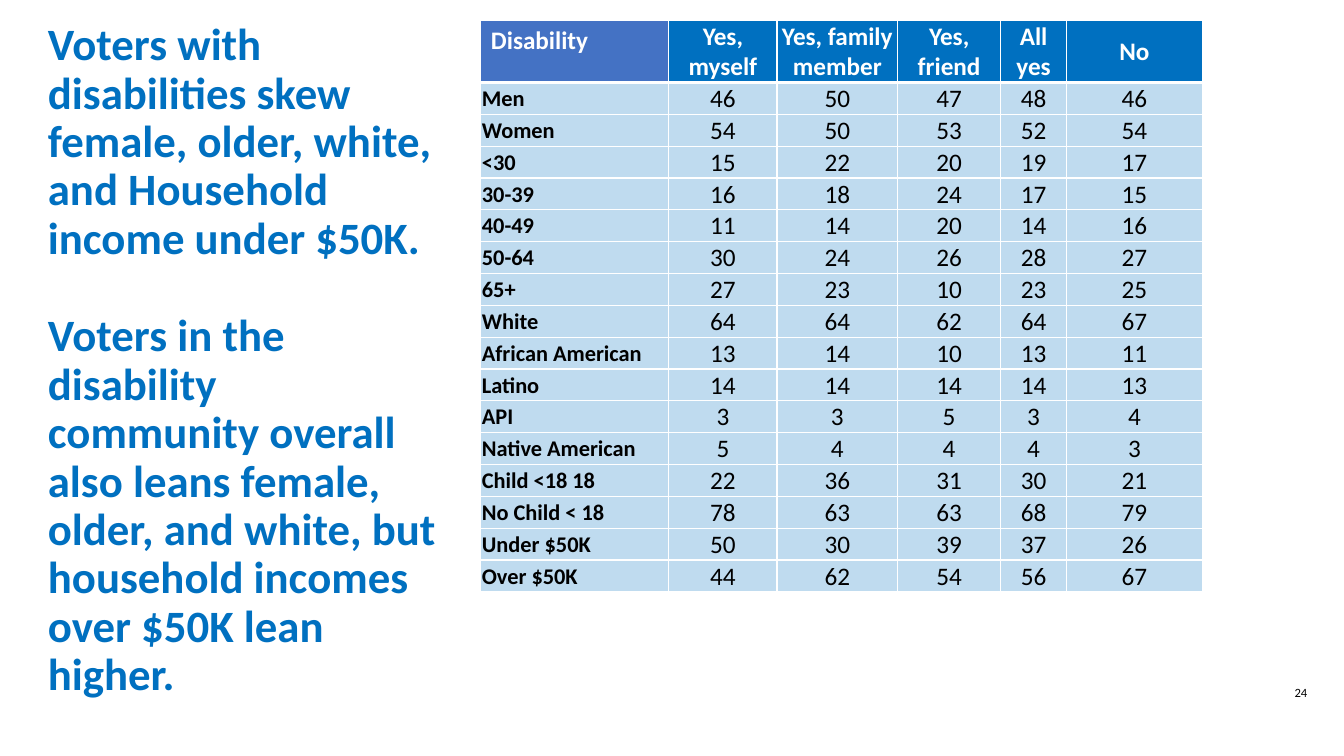
import lxml.etree
import pptx
import pptx.dml.color
import pptx.enum.text
import pptx.oxml.ns
import pptx.util

EMU_PER_PX = 9525  # 96 px to the inch
FONT_NAME = "Calibri"
COLORS = {
    "blue": "0070C0",
    "corner": "4472C4",
    "body": "BFDBEF",
    "white": "FFFFFF",
    "black": "000000",
}
ALIGN = pptx.enum.text.PP_ALIGN
ANCHOR = pptx.enum.text.MSO_ANCHOR

TITLE = [
    "Voters with disabilities skew female, older, white, and Household income under $50K.",
    "Voters in the disability community overall also leans female, older, and white, "
    "but household incomes over $50K lean higher.",
]
HEADERS = ["Disability", "Yes, myself", "Yes, family member", "Yes, friend", "All yes", "No"]
COLUMN_WIDTHS = [179, 103, 115, 98, 63, 129]
HEADER_HEIGHT, ROW_HEIGHT = 58, 30
ROWS = [
    ("Men", 46, 50, 47, 48, 46),
    ("Women", 54, 50, 53, 52, 54),
    ("<30", 15, 22, 20, 19, 17),
    ("30-39", 16, 18, 24, 17, 15),
    ("40-49", 11, 14, 20, 14, 16),
    ("50-64", 30, 24, 26, 28, 27),
    ("65+", 27, 23, 10, 23, 25),
    ("White", 64, 64, 62, 64, 67),
    ("African American", 13, 14, 10, 13, 11),
    ("Latino", 14, 14, 14, 14, 13),
    ("API", 3, 3, 5, 3, 4),
    ("Native American", 5, 4, 4, 4, 3),
    ("Child <18 18", 22, 36, 31, 30, 21),
    ("No Child < 18", 78, 63, 63, 68, 79),
    ("Under $50K", 50, 30, 39, 37, 26),
    ("Over $50K", 44, 62, 54, 56, 67),
]


def px(length):
    return pptx.util.Emu(length * EMU_PER_PX)


def rgb(name):
    return pptx.dml.color.RGBColor.from_string(COLORS[name])


def apply_format(target, values):
    for name, value in values.items():
        setattr(target, name, value)


def write_paragraph(paragraph, text, size, color, bold=False, align=ALIGN.LEFT):
    run = paragraph.add_run()
    run.text = text
    paragraph.alignment = align
    apply_format(run.font, {"name": FONT_NAME, "size": pptx.util.Pt(size), "bold": bold})
    run.font.color.rgb = rgb(color)


def set_borders(cell, widths):
    """Put white lines on the cell; widths maps each side to points."""
    properties = cell._tc.get_or_add_tcPr()
    for index, side in enumerate("LRTB"):
        line = lxml.etree.Element(
            pptx.oxml.ns.qn(f"a:ln{side}"), w=str(pptx.util.Pt(widths.get(side, 1))))
        fill = lxml.etree.SubElement(line, pptx.oxml.ns.qn("a:solidFill"))
        lxml.etree.SubElement(fill, pptx.oxml.ns.qn("a:srgbClr"), val=COLORS["white"])
        properties.insert(index, line)


def fill_cell(cell, text, fill, borders, **text_format):
    cell.fill.solid()
    cell.fill.fore_color.rgb = rgb(fill)
    set_borders(cell, borders)
    write_paragraph(cell.text_frame.paragraphs[0], text, **text_format)


def tighten_cell(cell):
    apply_format(cell, {
        "margin_left": px(1), "margin_right": px(1), "margin_top": px(1),
        "margin_bottom": 0, "vertical_anchor": ANCHOR.MIDDLE,
    })


def add_title(slide):
    title = slide.shapes.title
    apply_format(title, {"left": px(36), "top": px(28), "width": px(391), "height": px(632)})
    frame = title.text_frame
    apply_format(frame, {
        "word_wrap": True, "vertical_anchor": ANCHOR.MIDDLE,
        "auto_size": pptx.enum.text.MSO_AUTO_SIZE.NONE,
    })
    for index, text in enumerate(TITLE):
        paragraph = frame.add_paragraph() if index else frame.paragraphs[0]
        write_paragraph(paragraph, text, size=32, color="blue", bold=True)
        apply_format(paragraph, {
            "line_spacing": 0.9, "space_before": pptx.util.Pt(35 if index else 0)})


def add_voter_table(slide):
    frame = slide.shapes.add_table(
        len(ROWS) + 1, len(HEADERS), px(458), px(19),
        px(sum(COLUMN_WIDTHS)), px(HEADER_HEIGHT + ROW_HEIGHT * len(ROWS)))
    table = frame.table
    table.horz_banding = False
    for column, width in zip(table.columns, COLUMN_WIDTHS):
        column.width = px(width)
    for index, row in enumerate(table.rows):
        row.height = px(ROW_HEIGHT if index else HEADER_HEIGHT)

    # Header row
    for index, text in enumerate(HEADERS):
        cell = table.cell(0, index)
        fill_cell(cell, text, "blue" if index else "corner", {"B": 3},
                  size=18, color="white", bold=True,
                  align=ALIGN.CENTER if index else ALIGN.LEFT)
        if index:
            tighten_cell(cell)

    # Body rows
    for row_index, values in enumerate(ROWS, start=1):
        borders = {"T": 3} if row_index == 1 else {}
        for index, value in enumerate(values):
            cell = table.cell(row_index, index)
            fill_cell(cell, str(value), "body", borders,
                      size=18 if index else 16, color="black", bold=index == 0,
                      align=ALIGN.CENTER if index else ALIGN.LEFT)
            tighten_cell(cell)


def add_page_number(slide):
    box = slide.shapes.add_textbox(px(1203), px(648), px(72), px(32))
    box.text_frame.word_wrap = True
    write_paragraph(box.text_frame.paragraphs[0], "24", size=9, color="black",
                    align=ALIGN.CENTER)


def main():
    presentation = pptx.Presentation()
    apply_format(presentation, {"slide_width": px(1280), "slide_height": px(720)})
    slide = presentation.slides.add_slide(presentation.slide_layouts.get_by_name("Title Only"))
    add_title(slide)
    add_voter_table(slide)
    add_page_number(slide)
    presentation.save("out.pptx")


if __name__ == "__main__":
    main()
